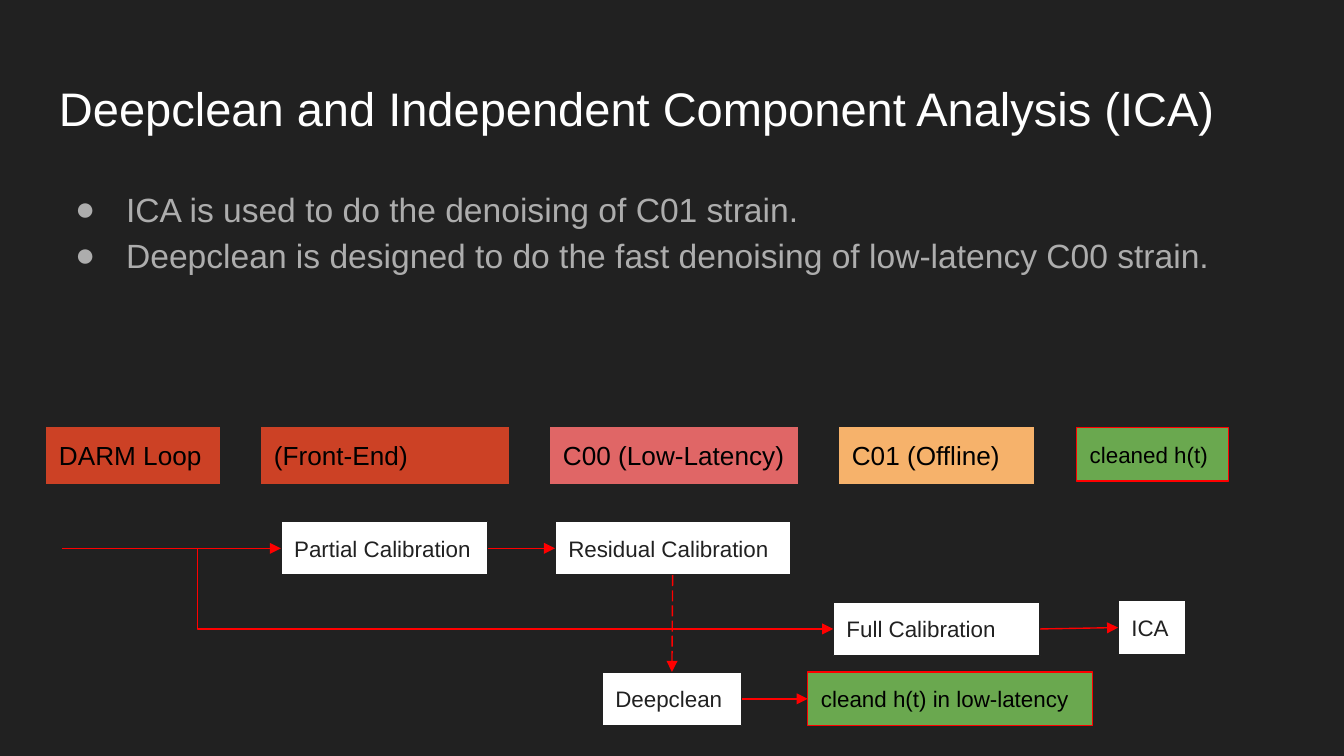
from lxml.etree import SubElement
from pptx import Presentation
from pptx.dml.color import RGBColor
from pptx.enum.dml import MSO_LINE
from pptx.enum.shapes import MSO_CONNECTOR, MSO_SHAPE
from pptx.enum.text import MSO_ANCHOR, PP_ALIGN
from pptx.oxml.ns import qn
from pptx.util import Inches, Pt

DARK, WHITE, GREY, RED = "212121", "FFFFFF", "ADADAD", "FF0000"
BRICK, ROSE, ORANGE, GREEN = "CC4125", "E06666", "F6B26B", "6AA84F"
TOP, LEFT, BOTTOM, RIGHT = range(4)  # connection sites of a rectangle


def color(text):
    return RGBColor.from_string(text)


def write(shape, lines, size=12, fill=DARK, anchor=MSO_ANCHOR.TOP,
          space=None, bullet=None, right=0.1):
    frame = shape.text_frame
    frame.word_wrap = True
    frame.vertical_anchor = anchor
    frame.margin_left = frame.margin_top = frame.margin_bottom = Inches(0.1)
    frame.margin_right = Inches(right)
    for i, line in enumerate(lines):
        par = frame.add_paragraph() if i else frame.paragraphs[0]
        par.alignment = PP_ALIGN.LEFT
        if space:
            par.line_spacing = space
        run = par.add_run()
        run.text = line
        run.font.size, run.font.name = Pt(size), "Arial"
        run.font.color.rgb = color(fill)
        if bullet:
            props = par._p.get_or_add_pPr()
            props.set("marL", str(Inches(0.5)))
            props.set("indent", str(Inches(-0.38)))
            tint = SubElement(props, qn("a:buClr"))
            SubElement(tint, qn("a:srgbClr"), val=fill)
            SubElement(props, qn("a:buFont"), typeface="Arial")
            SubElement(props, qn("a:buChar"), char=bullet)


def label(slide, box, lines, **form):
    shape = slide.shapes.add_textbox(*map(Inches, box))
    write(shape, lines, **form)


def block(slide, box, text, back=WHITE, edge=DARK, **form):
    shape = slide.shapes.add_shape(MSO_SHAPE.RECTANGLE, *map(Inches, box))
    shape.shadow.inherit = False
    shape.fill.solid()
    shape.fill.fore_color.rgb = color(back)
    shape.line.color.rgb = color(edge)
    shape.line.width = Pt(0.75)
    write(shape, [text], right=0.05, **form)
    return shape


def arrow(slide, end, side, start=None, exit=RIGHT, point=(0, 0),
          kind=MSO_CONNECTOR.STRAIGHT, dash=None):
    """Runs from a block, or from a free point, to one side of a block."""
    x, y = map(Inches, point)
    link = slide.shapes.add_connector(kind, x, y, x, y)
    if start is not None:
        link.begin_connect(start, exit)
    link.end_connect(end, side)
    link.line.color.rgb = color(RED)
    link.line.width = Pt(0.75)
    if dash:
        link.line.dash_style = dash
    SubElement(link.line._get_or_add_ln(), qn("a:tailEnd"), type="triangle")
    SubElement(link._element.spPr, qn("a:effectLst"))
    return link


def stages(slide, left, top):
    """Row of stage names; the last is the cleaned result."""
    gap, x = 0.3, left
    for text, width, back in (("DARM Loop", 1.3, BRICK),
                              ("(Front-End)", 1.85, BRICK),
                              ("C00 (Low-Latency)", 1.85, ROSE),
                              ("C01 (Offline)", 1.46, ORANGE)):
        block(slide, (x, top, width, 0.44), text, back, size=14, fill="000000")
        x += width + gap
    block(slide, (x + 0.01, top + 0.01, 1.13, 0.4), "cleaned h(t)", GREEN, RED,
          fill="000000")


def flow(slide, left, top):
    """Calibration steps and the arrows between them."""
    def step(x, y, width, text, **form):
        return block(slide, (left + x, top + y, width, 0.4), text, **form)

    # Steps
    part = step(1.75, 0, 1.54, "Partial Calibration")
    rest = step(3.79, 0, 1.75, "Residual Calibration")
    full = step(5.86, 0.6, 1.54, "Full Calibration")
    ica = step(7.98, 0.59, 0.5, "ICA")
    deep = step(4.14, 1.12, 1.04, "Deepclean")
    clean = step(5.67, 1.12, 2.12, "cleand h(t) in low-latency",
                 back=GREEN, edge=RED, fill="000000")

    # Arrows
    mid = top + 0.2
    arrow(slide, part, LEFT, point=(left + 0.12, mid))
    bend = arrow(slide, full, LEFT, point=(left + 1.12, mid),
                 kind=MSO_CONNECTOR.ELBOW)
    guides = bend._element.spPr.find(qn("a:prstGeom")).get_or_add_avLst()
    SubElement(guides, qn("a:gd"), name="adj1", fmla="val 200")
    for start, end in ((part, rest), (full, ica), (deep, clean)):
        arrow(slide, end, LEFT, start)
    arrow(slide, deep, TOP, rest, BOTTOM, dash=MSO_LINE.LONG_DASH)


def main():
    deck = Presentation()
    deck.slide_width, deck.slide_height = Inches(10), Inches(10 * 9 / 16)
    slide = deck.slides.add_slide(deck.slide_layouts[6])
    slide.background.fill.solid()
    slide.background.fill.fore_color.rgb = color(DARK)

    # Title and points
    left = 0.34
    label(slide, (left, 0.49, 9.32, 0.63),
          ["Deepclean and Independent Component Analysis (ICA)"],
          size=25.2, fill=WHITE, anchor=MSO_ANCHOR.MIDDLE)
    label(slide, (left, 1.26, 9.32, 3.74),
          ["ICA is used to do the denoising of C01 strain.",
           "Deepclean is designed to do the fast denoising of low-latency "
           "C00 strain."],
          size=18, fill=GREY, space=1.15, bullet="●")

    # Diagram
    stages(slide, left, 3.17)
    flow(slide, left, 3.88)
    deck.save("out.pptx")


if __name__ == "__main__":
    main()
